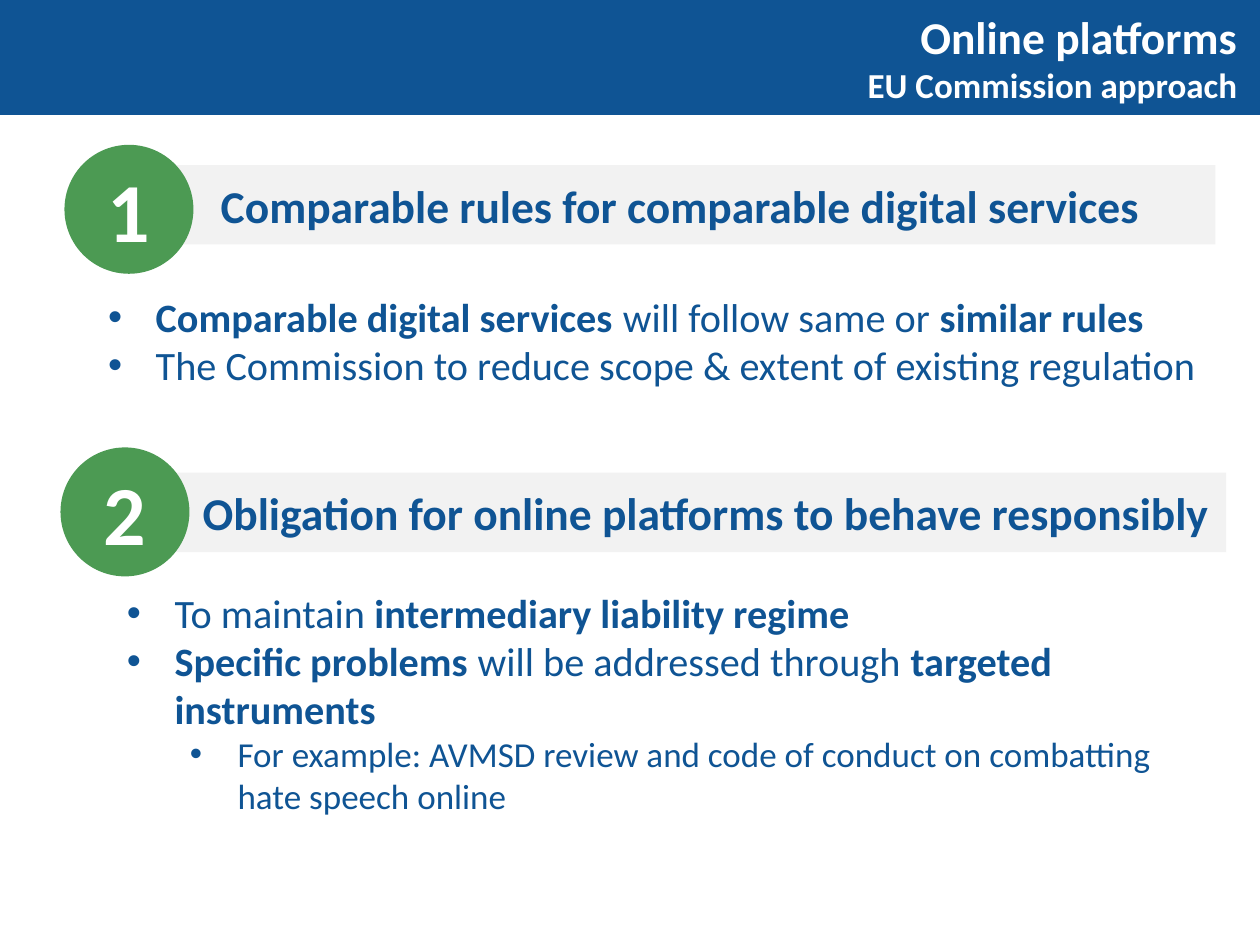
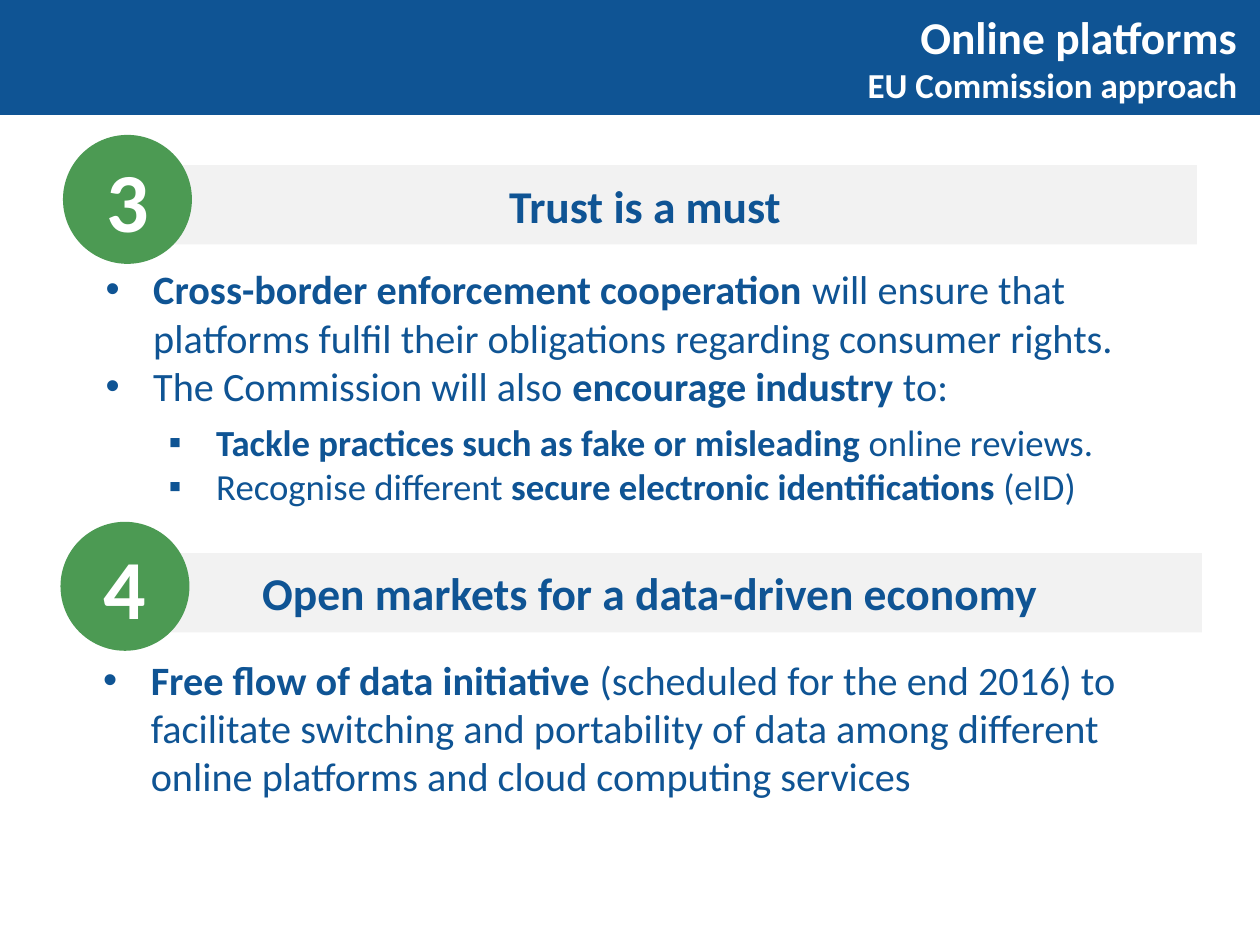
from lxml import etree
from pptx import Presentation
from pptx.dml.color import RGBColor
from pptx.enum.shapes import MSO_SHAPE
from pptx.enum.text import MSO_ANCHOR, PP_ALIGN
from pptx.oxml.ns import qn
from pptx.util import Cm, Pt

RECT, OVAL = MSO_SHAPE.RECTANGLE, MSO_SHAPE.OVAL
LEFT, MID, RIGHT = PP_ALIGN.LEFT, PP_ALIGN.CENTER, PP_ALIGN.RIGHT
CENTRE = MSO_ANCHOR.MIDDLE
BLUE, GREEN, GREY, WHITE = "0F5494", "4C9A53", "F2F2F2", "FFFFFF"
FONT = "Calibri"
WIDTH, HEIGHT = 25.4, 19.05
DISC, BAR = 2.6, 1.6
HANG, STEP = 0.96, 1.27


def paint(target, tone):
    """Give a fill or a font colour a hex tone."""
    if hasattr(target, "solid"):
        target.solid()
        target = target.fore_color
    target.rgb = RGBColor.from_string(tone)


def write(frame, text, size=23, tone=BLUE, bold=False, align=LEFT,
          mark=None, level=0, after=0):
    """Add one paragraph, where stars enclose bold words."""
    para = frame.paragraphs[0]
    if para.runs:
        para = frame.add_paragraph()
    para.alignment = align
    para.space_before, para.space_after = Pt(0), Pt(after)
    if mark:
        para.level = level
        props = para._p.get_or_add_pPr()
        props.set("marL", str(Cm(HANG + level * STEP)))
        props.set("indent", str(-Cm(HANG)))
        etree.SubElement(props, qn("a:buFont")).set("typeface", "Arial")
        etree.SubElement(props, qn("a:buChar")).set("char", mark)
    for index, part in enumerate(text.split("*")):
        if part:
            run = para.add_run()
            run.text = part
            font = run.font
            font.name, font.size = FONT, Pt(size)
            font.bold = bold or index % 2 == 1
            paint(font.color, tone)


def shape(slide, kind, left, top, width, height, tone):
    """Draw a plain filled shape."""
    item = slide.shapes.add_shape(kind, Cm(left), Cm(top), Cm(width), Cm(height))
    item.shadow.inherit = False
    paint(item.fill, tone)
    item.line.fill.background()
    return item


def head(slide):
    """Place the two-line title at the right of the top band."""
    title = slide.shapes.title
    title.left, title.top = Cm(4.1), Cm(0.13)
    title.width, title.height = Cm(21.1), Cm(2.06)
    frame = title.text_frame
    frame.vertical_anchor = CENTRE
    for text, size in (("Online platforms", 26), ("EU Commission approach", 20)):
        write(frame, text, size=size, tone=WHITE, bold=True, align=RIGHT)


def bar(slide, text, left, top, width, shift=0):
    """Draw a grey heading bar with centred text."""
    frame = shape(slide, RECT, left, top, width, BAR, GREY).text_frame
    frame.word_wrap, frame.vertical_anchor = True, CENTRE
    frame.margin_left, frame.margin_right = Cm(shift), 0
    write(frame, text, size=26, bold=True, align=MID)


def disc(slide, text, left, top):
    """Draw a numbered green disc."""
    frame = shape(slide, OVAL, left, top, DISC, DISC, GREEN).text_frame
    frame.word_wrap, frame.vertical_anchor = False, CENTRE
    frame.margin_left = frame.margin_right = 0
    frame.margin_top = frame.margin_bottom = 0
    write(frame, text, size=48, tone=WHITE, bold=True, align=MID)


def body(slide, items, left, top, width, height):
    """Add a text box of bullets, each a text with its format."""
    box = slide.shapes.add_textbox(Cm(left), Cm(top), Cm(width), Cm(height))
    box.text_frame.word_wrap = True
    for text, style in items:
        write(box.text_frame, text, **{"mark": "•", **style})


def rules(slide):
    """Fill the slide on rules and duties."""
    bar(slide, "Comparable rules for comparable digital services",
        1.9, 3.33, 22.6, shift=1.04)
    disc(slide, "1", 1.3, 2.92)
    body(slide, [
        ("*Comparable digital services *will follow same or *similar rules*", {}),
        ("The Commission to reduce scope & extent of existing regulation", {}),
    ], 1.93, 5.77, 22.6, 3.25)
    bar(slide, "Obligation for online platforms to behave responsibly",
        2.72, 9.53, 22, shift=1.04)
    disc(slide, "2", 1.22, 9.02)
    body(slide, [
        ("To maintain *intermediary liability regime*", {}),
        ("*Specific problems *will be addressed through *targeted instruments*", {}),
        ("For example: AVMSD review and code of conduct on combatting "
         "hate speech online", {"size": 20, "level": 1}),
    ], 2.31, 11.73, 21.8, 4.93)


def trust(slide):
    """Fill the slide on trust and open markets."""
    sub = {"size": 21, "level": 1, "mark": "▪"}
    bar(slide, "Trust is a must", 1.88, 3.33, 22.25)
    disc(slide, "3", 1.27, 2.72)
    body(slide, [
        ("*Cross-border enforcement cooperation *will ensure that platforms "
         "fulfil their obligations regarding consumer rights.", {}),
        ("The Commission will also *encourage industry *to:", {"after": 6}),
        ("*Tackle practices such as fake or misleading *online reviews.", sub),
        ("Recognise different *secure electronic identifications* (eID)", sub),
    ], 1.88, 5.21, 21.8, 6.25)
    bar(slide, "Open markets for a data-driven economy", 1.98, 11.15, 22.25)
    disc(slide, "4", 1.22, 10.52)
    body(slide, [
        ("*Free flow of data initiative *(scheduled for the end 2016) to "
         "facilitate switching and portability of data among different "
         "online platforms and cloud computing services", {}),
    ], 1.83, 13.08, 21.8, 3.2)


def main():
    """Build and save both slides."""
    deck = Presentation()
    deck.slide_width, deck.slide_height = Cm(WIDTH), Cm(HEIGHT)
    base = deck.slide_layouts[5]
    pages = [deck.slides.add_slide(base) for _ in range(2)]
    band = shape(pages[0], RECT, 0, 0, WIDTH, 2.31, BLUE)
    paint(band.line.fill, BLUE)
    band.line.width = Pt(0.75)
    base.shapes.element.insert(2, band.element)
    for page, fill in zip(pages, (rules, trust)):
        head(page)
        fill(page)
    deck.save("out.pptx")


if __name__ == "__main__":
    main()
